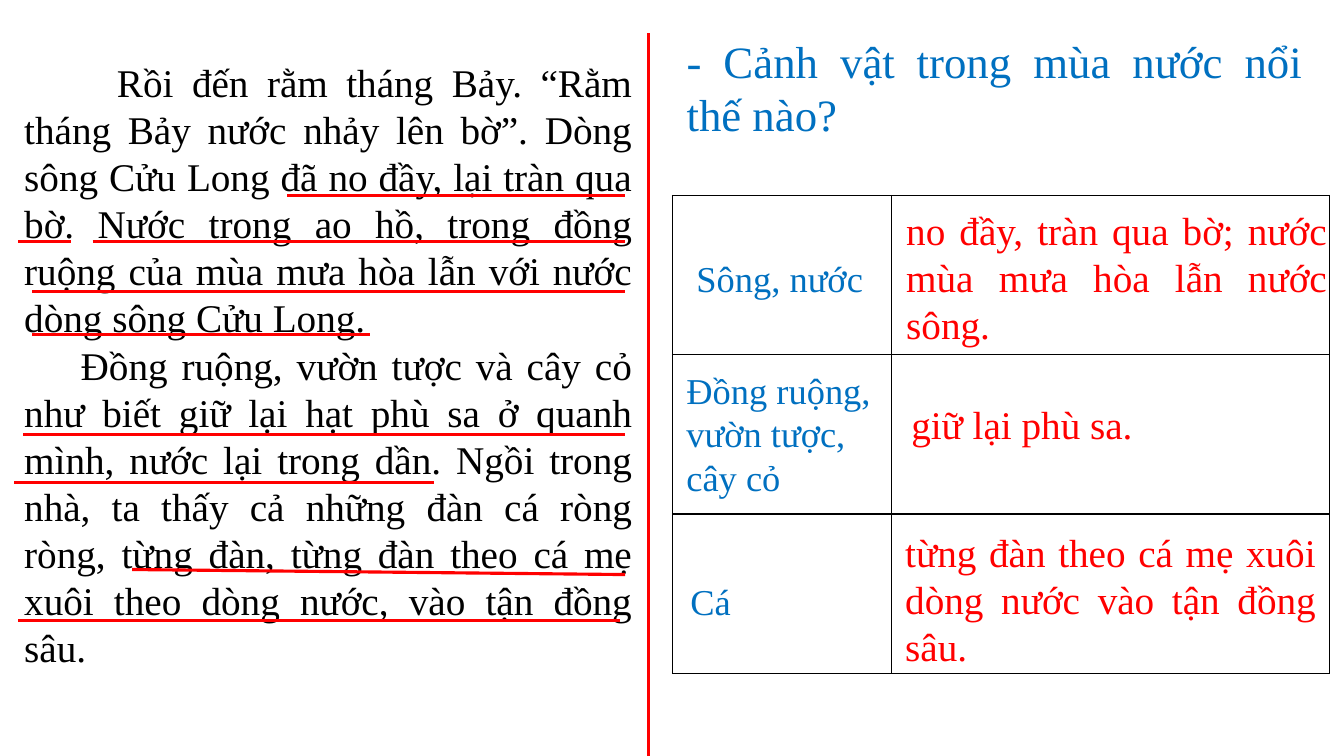
import dataclasses
import typing

import lxml.etree
import pptx
import pptx.dml.color
import pptx.enum.shapes
import pptx.enum.text
import pptx.oxml.ns
import pptx.util

Inches = pptx.util.Inches
Color = pptx.dml.color.RGBColor
Align = pptx.enum.text.PP_ALIGN
qn = pptx.oxml.ns.qn


@dataclasses.dataclass(frozen=True)
class Theme:
    font: str = "Times New Roman"
    black: Color = Color(0, 0, 0)
    blue: Color = Color(0x00, 0x70, 0xC0)
    red: Color = Color(0xFF, 0, 0)
    title: int = 32
    body: int = 28
    label: int = 26
    rule: float = 2.25
    grid: float = 1


@dataclasses.dataclass(frozen=True)
class Block:
    box: tuple[float, float, float, float]
    paras: tuple[str, ...]
    size: int
    color: Color
    align: Align = Align.JUSTIFY
    indents: tuple[float, ...] = (0,)


class Rule(typing.NamedTuple):
    left: float
    top: float
    right: float
    end: float


THEME = Theme()

# Texts
QUESTION = Block((6.71, 0.28, 6.31, 1.18),
                 ("- Cảnh vật trong mùa nước nổi thế nào?",),
                 THEME.title, THEME.blue)
STORY = Block(
    (0.14, 0.53, 6.23, 6.23),
    ("Rồi đến rằm tháng Bảy. “Rằm tháng Bảy nước nhảy lên bờ”. Dòng sông "
     "Cửu Long đã no đầy, lại tràn qua bờ. Nước trong ao hồ, trong đồng ruộng "
     "của mùa mưa hòa lẫn với nước dòng sông Cửu Long.",
     "Đồng ruộng, vườn tược và cây cỏ như biết giữ lại hạt phù sa ở quanh "
     "mình, nước lại trong dần. Ngồi trong nhà, ta thấy cả những đàn cá ròng "
     "ròng, từng đàn, từng đàn theo cá mẹ xuôi theo dòng nước, vào tận đồng "
     "sâu."),
    THEME.body, THEME.black, indents=(0.92, 0.56))
LABELS = [
    Block(box, (text,), THEME.label, THEME.blue, Align.LEFT)
    for box, text in (
        ((6.81, 2.49, 1.86, 0.54), "Sông, nước"),
        ((6.71, 3.6, 2.18, 1.41), "Đồng ruộng, vườn tược, cây cỏ"),
        ((6.75, 5.7, 1.55, 0.54), "Cá"),
    )
]
ANSWERS = [
    Block(box, (text,), THEME.body, THEME.red)
    for box, text in (
        ((8.89, 2, 4.37, 1.51),
         "no đầy, tràn qua bờ; nước mùa mưa hòa lẫn nước sông."),
        ((8.94, 3.92, 3.73, 0.57), "giữ lại phù sa."),
        ((8.88, 5.19, 4.27, 1.51),
         "từng đàn theo cá mẹ xuôi dòng nước vào tận đồng sâu."),
    )
]

# Divider, then underlines in reading order
RULES = [
    Rule(6.43, 0.33, 6.43, 7.5),
    Rule(2.85, 1.94, 6.2, 1.94),
    Rule(0.18, 2.4, 0.7, 2.4),
    Rule(0.92, 2.4, 6.2, 2.4),
    Rule(0.32, 2.89, 6.2, 2.89),
    Rule(0.32, 3.32, 3.67, 3.32),
    Rule(0.23, 4.31, 6.2, 4.31),
    Rule(0.14, 4.79, 4.3, 4.79),
    Rule(1.31, 5.65, 6.2, 5.7),
    Rule(0.18, 6.16, 6.15, 6.16),
]
COLS = (2.17, 4.35)
ROWS = (1.58,) * 3


def assign(target: typing.Any, values: dict[str, typing.Any]) -> None:
    for name, value in values.items():
        setattr(target, name, value)


def write(shape: typing.Any, block: Block) -> None:
    """Place a shape and fill it with the block's text."""
    sides = ("left", "top", "width", "height")
    assign(shape, dict(zip(sides, map(Inches, block.box))))
    frame = shape.text_frame
    assign(frame, {
        "word_wrap": True,
        "auto_size": pptx.enum.text.MSO_AUTO_SIZE.NONE,
        "vertical_anchor": pptx.enum.text.MSO_ANCHOR.TOP,
        "text": "\n".join(block.paras),
    })
    for para, indent in zip(frame.paragraphs, block.indents):
        assign(para, {"alignment": block.align,
                      "space_before": pptx.util.Pt(0)})
        props = para._p.get_or_add_pPr()
        props.set("marL", "0")
        props.set("indent", str(Inches(indent)))
        lxml.etree.SubElement(props, qn("a:buNone"))
        font = para.runs[0].font
        assign(font, {"name": THEME.font, "size": pptx.util.Pt(block.size)})
        font.color.rgb = block.color


def draw_rule(slide: typing.Any, rule: Rule) -> None:
    line = slide.shapes.add_connector(
        pptx.enum.shapes.MSO_CONNECTOR.STRAIGHT, *map(Inches, rule))
    line.line.color.rgb = THEME.red
    line.line.width = pptx.util.Pt(THEME.rule)
    lxml.etree.SubElement(line._element.spPr, qn("a:effectLst"))


def frame_cell(cell: typing.Any) -> None:
    """Give a cell thin black borders and no fill."""
    props = cell._tc.get_or_add_tcPr()
    for side in ("lnL", "lnR", "lnT", "lnB"):
        edge = lxml.etree.SubElement(
            props, qn(f"a:{side}"), w=str(pptx.util.Pt(THEME.grid)))
        fill = lxml.etree.SubElement(edge, qn("a:solidFill"))
        lxml.etree.SubElement(fill, qn("a:srgbClr"), val=str(THEME.black))
    cell.fill.background()


def draw_grid(slide: typing.Any) -> None:
    table = slide.shapes.add_table(
        len(ROWS), len(COLS), Inches(6.67), Inches(1.94),
        Inches(sum(COLS)), Inches(sum(ROWS))).table
    assign(table, {"first_row": False, "horz_banding": False})
    for col, width in zip(table.columns, COLS):
        col.width = Inches(width)
    for row, height in zip(table.rows, ROWS):
        row.height = Inches(height)
    for cell in table.iter_cells():
        frame_cell(cell)


def main() -> None:
    deck = pptx.Presentation()
    assign(deck, {"slide_width": Inches(13.33), "slide_height": Inches(7.5)})
    slide = deck.slides.add_slide(deck.slide_layouts[1])

    # Question and story
    write(slide.shapes.title, QUESTION)
    write(slide.placeholders[1], STORY)

    # Answer grid with its labels and answers
    draw_grid(slide)
    for block in LABELS + ANSWERS:
        write(slide.shapes.add_textbox(*map(Inches, block.box)), block)

    # Divider and underlines
    for rule in RULES:
        draw_rule(slide, rule)

    deck.save("out.pptx")


if __name__ == "__main__":
    main()
